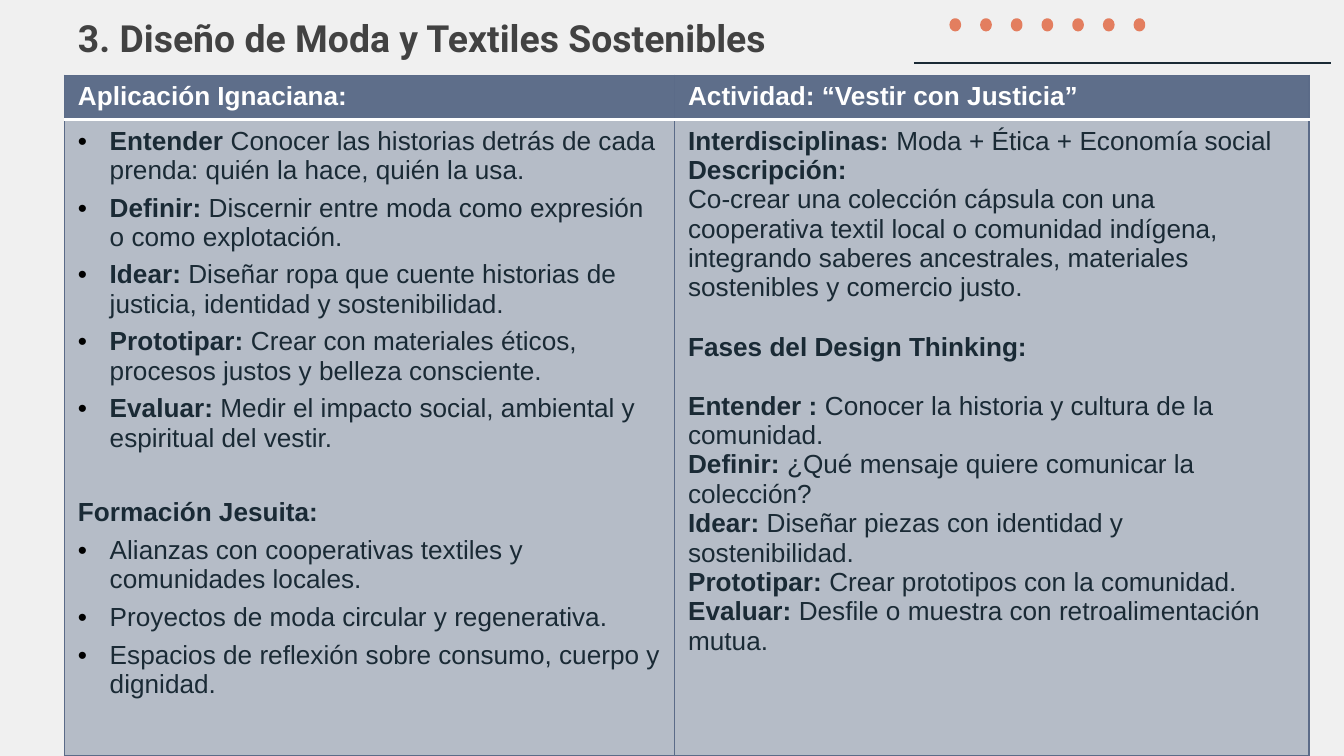
import pptx
import pptx.util
import pptx.dml.color
import pptx.enum.shapes
import pptx.enum.text
import pptx.oxml.ns
from lxml import etree
from pptx.util import Cm, Pt

qn = pptx.oxml.ns.qn


def color(value):
    return pptx.dml.color.RGBColor.from_string(value)


def add_paragraph(text_frame, index, label, body, label_color):
    paragraph = text_frame.paragraphs[0] if index == 0 else text_frame.add_paragraph()
    for text, bold in ((label, True), (body, False)):
        if text:
            run = paragraph.add_run()
            run.text = text
            run.font.name = "Arial"
            run.font.size = Pt(14)
            run.font.bold = bold
            run.font.color.rgb = color(label_color)
    return paragraph


application = [
    ("Entender", " Conocer las historias detrás de cada prenda: quién la hace, quién la usa."),
    ("Definir: ", "Discernir entre moda como expresión o como explotación."),
    ("Idear: ", "Diseñar ropa que cuente historias de justicia, identidad y sostenibilidad."),
    ("Prototipar: ", "Crear con materiales éticos, procesos justos y belleza consciente."),
    ("Evaluar: ", "Medir el impacto social, ambiental y espiritual del vestir."),
    ("Formación Jesuita:", ""),
    ("", "Alianzas con cooperativas textiles y comunidades locales."),
    ("", "Proyectos de moda circular y regenerativa."),
    ("", "Espacios de reflexión sobre consumo, cuerpo y dignidad."),
]
activity = [
    ("Interdisciplinas: ", "Moda + Ética + Economía social"),
    ("Descripción:", ""),
    ("", "Co-crear una colección cápsula con una cooperativa textil local o comunidad "
         "indígena, integrando saberes ancestrales, materiales sostenibles y comercio justo."),
    ("Fases del Design Thinking:", ""),
    ("Entender : ", "Conocer la historia y cultura de la comunidad."),
    ("Definir: ", "¿Qué mensaje quiere comunicar la colección?"),
    ("Idear: ", "Diseñar piezas con identidad y sostenibilidad."),
    ("Prototipar: ", "Crear prototipos con la comunidad."),
    ("Evaluar: ", "Desfile o muestra con retroalimentación mutua."),
]

presentation = pptx.Presentation()
presentation.slide_width = Cm(25.4)
presentation.slide_height = Cm(14.29)
slide = presentation.slides.add_slide(presentation.slide_layouts[5])
slide.background.fill.solid()
slide.background.fill.fore_color.rgb = color("F0F0F0")

title = slide.shapes.title
title.left, title.top, title.width, title.height = Cm(1.22), Cm(0.38), Cm(24.33), Cm(1.5)
title.text_frame.text = "3. Diseño de Moda y Textiles Sostenibles"
title.text_frame.word_wrap = True
title.text_frame.auto_size = pptx.enum.text.MSO_AUTO_SIZE.NONE
title.text_frame.vertical_anchor = pptx.enum.text.MSO_ANCHOR.TOP
paragraph = title.text_frame.paragraphs[0]
paragraph.alignment = pptx.enum.text.PP_ALIGN.LEFT
paragraph.line_spacing = Pt(18)
paragraph.space_before = Pt(0)
font = paragraph.runs[0].font
font.name = "Roboto"
font.size = Pt(20)
font.bold = True
font.color.rgb = color("424242")

table = slide.shapes.add_table(2, 2, Cm(1.22), Cm(1.42), Cm(23.52), Cm(12.86)).table
table.columns[0].width, table.columns[1].width = Cm(11.53), Cm(11.99)
table.rows[0].height, table.rows[1].height = Cm(0.84), Cm(12.02)

for row in range(2):
    for column in range(2):
        cell = table.cell(row, column)
        properties = cell._tc.get_or_add_tcPr()
        for side in ("L", "R", "T", "B"):
            divider = (row, side) in ((0, "B"), (1, "T"))
            width, line_color = (2, "FFFFFF") if divider else (0.75, "5B6B88")
            border = etree.SubElement(properties, qn("a:ln" + side), w=str(Pt(width)))
            fill = etree.SubElement(border, qn("a:solidFill"))
            etree.SubElement(fill, qn("a:srgbClr"), val=line_color)
        cell.fill.solid()
        cell.fill.fore_color.rgb = color("5E6E8A")
        if row == 1:
            fill_color = properties.find(qn("a:solidFill"))[0]
            etree.SubElement(fill_color, qn("a:alpha"), val="40000")

for column, heading in enumerate(("Aplicación Ignaciana:", "Actividad: “Vestir con Justicia”")):
    add_paragraph(table.cell(0, column).text_frame, 0, heading, "", "FFFFFF")

for index, (label, body) in enumerate(application):
    paragraph = add_paragraph(table.cell(1, 0).text_frame, index, label, body, "1A2A35")
    if body:
        properties = paragraph._p.get_or_add_pPr()
        properties.set("marL", str(Cm(0.6)))
        properties.set("indent", str(-Cm(0.6)))
        bullet_color = etree.SubElement(properties, qn("a:buClr"))
        etree.SubElement(bullet_color, qn("a:srgbClr"), val="000000")
        etree.SubElement(properties, qn("a:buFont"), typeface="Arial")
        etree.SubElement(properties, qn("a:buChar"), char="•")
    if index > 0:
        paragraph.space_before = Pt(2.2 if body else 22)
    paragraph.space_after = Pt(2.2)

for index, (label, body) in enumerate(activity):
    paragraph = add_paragraph(table.cell(1, 1).text_frame, index, label, body, "1A2A35")
    if label.startswith("Fases"):
        paragraph.space_before = Pt(16)
        paragraph.space_after = Pt(16)

for index in range(7):
    dot = slide.shapes.add_shape(pptx.enum.shapes.MSO_SHAPE.OVAL,
                                 Cm(17.98 + 0.58 * index), Cm(0.38), Cm(0.15), Cm(0.18))
    dot.shadow.inherit = False
    dot.fill.solid()
    dot.fill.fore_color.rgb = color("E37E5F")
    dot.line.color.rgb = color("E37E5F")
    dot.line.width = Pt(2)

rule = slide.shapes.add_connector(pptx.enum.shapes.MSO_CONNECTOR.STRAIGHT,
                                  Cm(17.27), Cm(1.19), Cm(25.15), Cm(1.19))
rule.line.color.rgb = color("1A2A35")
rule.line.width = Pt(0.75)
etree.SubElement(rule._element.spPr, qn("a:effectLst"))

presentation.save("out.pptx")
